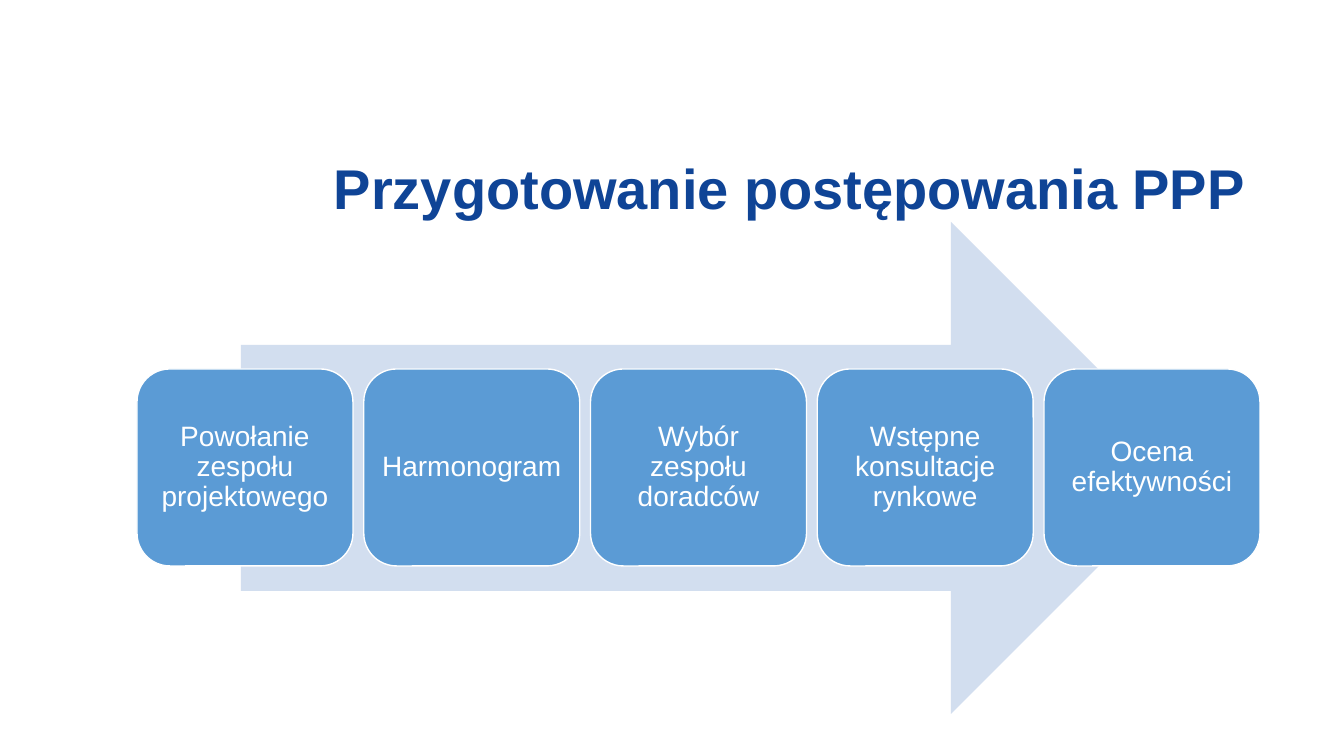
import pptx
import pptx.util
from pptx.dml.color import RGBColor
from pptx.enum.shapes import MSO_SHAPE
from pptx.enum.text import MSO_ANCHOR, PP_ALIGN

EMU_PER_PX = 914400 / 100.8
STEPS = [
    "Powołanie zespołu projektowego",
    "Harmonogram",
    "Wybór zespołu doradców",
    "Wstępne konsultacje rynkowe",
    "Ocena efektywności",
]
FIRST_LEFT, LAST_LEFT = 137, 1044


def px(n):
    return pptx.util.Emu(round(n * EMU_PER_PX))


def color(hex_string):
    return RGBColor.from_string(hex_string)


def set_text(sp, text, size, fill, bold=False, align=PP_ALIGN.LEFT, margins=(10, 5)):
    """Fill a shape with one middle-anchored paragraph; margins are (side, top and bottom)."""
    tf = sp.text_frame
    tf.word_wrap = True
    tf.vertical_anchor = MSO_ANCHOR.MIDDLE
    tf.margin_left = tf.margin_right = px(margins[0])
    tf.margin_top = tf.margin_bottom = px(margins[1])
    p = tf.paragraphs[0]
    p.alignment = align
    p.line_spacing = 0.9
    r = p.add_run()
    r.text = text
    r.font.name = "Arial"
    r.font.size = pptx.util.Pt(size)
    r.font.bold = bold
    r.font.color.rgb = color(fill)


def add_shape(s, kind, box, fill, line=None):
    sp = s.shapes.add_shape(kind, *map(px, box))
    sp.shadow.inherit = False
    sp.fill.solid()
    sp.fill.fore_color.rgb = color(fill)
    if line:
        sp.line.color.rgb = color(line)
        sp.line.width = pptx.util.Pt(1)
    else:
        sp.line.fill.background()
    return sp


def add_title(s, text):
    sp = s.shapes.add_textbox(px(324), px(162), px(961), px(59))
    set_text(sp, text, size=40, fill="0F4496", bold=True)


def add_step(s, left, text):
    sp = add_shape(s, MSO_SHAPE.ROUNDED_RECTANGLE, (left, 369, 216, 197),
                   "5B9BD5", line="FFFFFF")
    set_text(sp, text, size=20, fill="FFFFFF", align=PP_ALIGN.CENTER, margins=(7, 8))


def main():
    prs = pptx.Presentation()
    prs.slide_width, prs.slide_height = px(1344), px(756)
    s = prs.slides.add_slide(prs.slide_layouts[6])
    add_title(s, "Przygotowanie postępowania PPP")
    add_shape(s, MSO_SHAPE.RIGHT_ARROW, (241, 222, 956, 492), "D2DEEF")
    pitch = (LAST_LEFT - FIRST_LEFT) / (len(STEPS) - 1)
    for i, step in enumerate(STEPS):
        add_step(s, FIRST_LEFT + i * pitch, step)
    prs.save("out.pptx")


if __name__ == "__main__":
    main()
